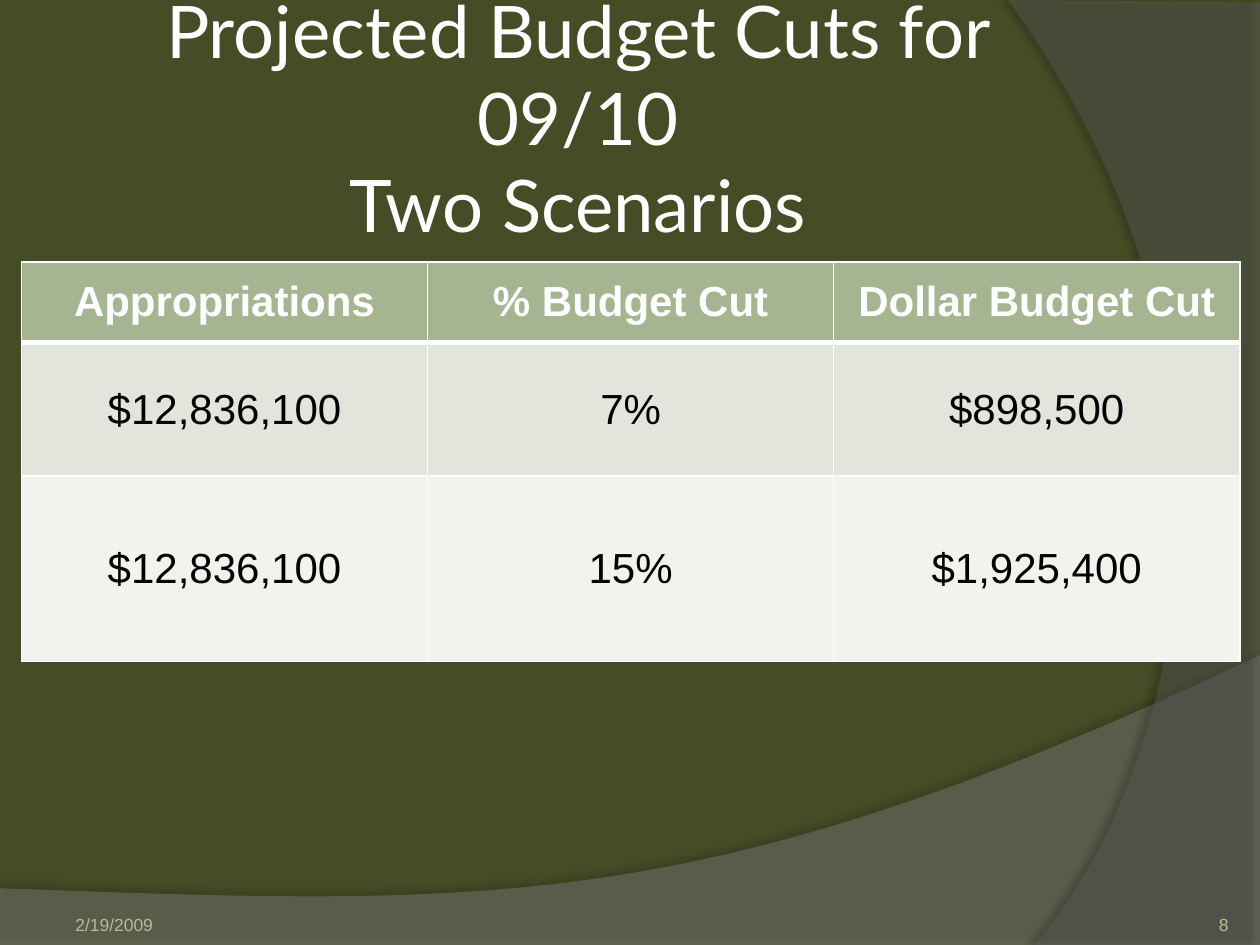
from dataclasses import dataclass

from lxml.etree import SubElement
from pptx import Presentation
from pptx.dml.color import RGBColor
from pptx.enum.text import MSO_ANCHOR, PP_ALIGN
from pptx.oxml.ns import qn
from pptx.util import Inches, Pt


@dataclass(frozen=True)
class Theme:
    back: str = "444D26"
    wave: str = "7F7F7F"
    arc: str = "5E5E5E"
    white: str = "FFFFFF"
    black: str = "000000"
    head: str = "A5B592"
    rows: tuple = ("E1E5DC", "F0F3EE")
    foot: str = "BCB995"
    title_font: str = "Lato"
    body_font: str = "Arial"
    title_size: float = 41.4
    cell_size: int = 24
    foot_size: int = 10


THEME = Theme()
ROWS = [
    ("Appropriations", "% Budget Cut", "Dollar Budget Cut"),
    ("$12,836,100", "7%", "$898,500"),
    ("$12,836,100", "15%", "$1,925,400"),
]
HEIGHTS = (0.64, 1.06, 1.47)


def paint(fill, color):
    fill.solid()
    fill.fore_color.rgb = RGBColor.from_string(color)


def style(para, font, size, color, align, bold=False):
    para.alignment = align
    for run in para.runs:
        run.font.name = font
        run.font.size = Pt(size)
        run.font.bold = bold
        run.font.color.rgb = RGBColor.from_string(color)


def add_alpha(color, percent):
    SubElement(color, qn("a:alpha"), val=str(percent * 1000))


def bezier(start, ctrl1, ctrl2, end, steps=60):
    points = []
    for i in range(1, steps + 1):
        t = i / steps
        u = 1 - t
        weights = (u**3, 3 * u * u * t, 3 * u * t * t, t**3)
        points.append(tuple(
            sum(w * p[axis] for w, p in zip(weights, (start, ctrl1, ctrl2, end)))
            for axis in (0, 1)
        ))
    return points


def add_band(slide, box, edge, curve, color, alpha, shade):
    """Draw straight edges, then a curve back to the start; points are relative to box."""
    left, top = box[:2]
    points = [
        (Inches(left + x), Inches(top + y))
        for x, y in edge + bezier(edge[-1], *curve)
    ]
    maker = slide.shapes.build_freeform(*points[0])
    maker.add_line_segments(points[1:], close=True)
    band = maker.convert_to_shape()
    paint(band.fill, color)
    add_alpha(band.fill._xPr.find(qn("a:solidFill"))[0], alpha)
    band.line.fill.background()

    # Soft shadow along the curve
    band.shadow.inherit = False
    effects = band._element.spPr.find(qn("a:effectLst"))
    dist, angle, dark = shade
    outer = SubElement(
        effects, qn("a:outerShdw"), blurRad=str(Pt(4)), dist=str(Pt(dist)),
        dir=str(angle * 60000), algn="ctr", rotWithShape="0",
    )
    add_alpha(SubElement(outer, qn("a:srgbClr"), val=THEME.black), dark)


def add_label(slide, box, text, font, size, color, align, anchor, insets):
    frame = slide.shapes.add_textbox(*map(Inches, box)).text_frame
    frame.word_wrap = True
    frame.vertical_anchor = anchor
    (frame.margin_left, frame.margin_top,
     frame.margin_right, frame.margin_bottom) = map(Inches, insets)
    para = frame.paragraphs[0]
    para.text = text
    style(para, font, size, color, align)


def add_border(cell, side, width):
    line = SubElement(cell._tc.get_or_add_tcPr(), qn(f"a:ln{side}"), w=str(Pt(width)))
    SubElement(SubElement(line, qn("a:solidFill")), qn("a:srgbClr"), val=THEME.white)


def add_budget(slide, box):
    table = slide.shapes.add_table(len(ROWS), len(ROWS[0]), *map(Inches, box)).table
    table.horz_banding = False
    for col in table.columns:
        col.width = Inches(box[2] / len(ROWS[0]))
    for r, (row, height) in enumerate(zip(ROWS, HEIGHTS)):
        table.rows[r].height = Inches(height)
        is_head = r == 0
        for c, text in enumerate(row):
            cell = table.cell(r, c)
            for side in "LRTB":
                thick = (side == "B" and is_head) or (side == "T" and r == 1)
                add_border(cell, side, 3 if thick else 1)
            paint(cell.fill, THEME.head if is_head else THEME.rows[r - 1])
            cell.vertical_anchor = MSO_ANCHOR.MIDDLE
            cell.text_frame.text = text
            style(
                cell.text_frame.paragraphs[0], THEME.body_font, THEME.cell_size,
                THEME.white if is_head else THEME.black, PP_ALIGN.CENTER, is_head,
            )


def add_scene(slide, box):
    left, top, width, height = box
    paint(slide.background.fill, THEME.back)
    # Wave along the bottom
    add_band(
        slide, (left, top + 5.2),
        [(0, 1.85), (0, height - 5.2), (width, height - 5.2), (width, 0)],
        [(5.59, 2.09), (3.91, 1.99), (0, 1.85)],
        THEME.wave, 45, (3.5, 270, 35),
    )
    # Arc down the right side
    add_band(
        slide, (left + width - 2, top),
        [(2, 0.02), (2, height), (0.21, height)],
        [(1.35, 6.19), (2.18, 3), (0, 0)],
        THEME.arc, 40, (4, 180, 45),
    )


def add_title(slide, box):
    add_label(
        slide, box, "Projected Budget Cuts for 09/10\vTwo Scenarios",
        THEME.title_font, THEME.title_size, THEME.white,
        PP_ALIGN.CENTER, MSO_ANCHOR.MIDDLE, (0.05,) * 4,
    )


def add_footer(slide, box):
    left, top, width, height = box
    look = (THEME.body_font, THEME.foot_size, THEME.foot)
    add_label(slide, (left, top, 2.33, height), "2/19/2009", *look,
              PP_ALIGN.LEFT, MSO_ANCHOR.BOTTOM, (0.1, 0.05, 0.1, 0))
    add_label(slide, (left + width - 0.83, top, 0.83, height), "8", *look,
              PP_ALIGN.RIGHT, MSO_ANCHOR.BOTTOM, (0,) * 4)


def main():
    deck = Presentation()
    deck.slide_width, deck.slide_height = Inches(10), Inches(7.5)
    slide = deck.slides.add_slide(deck.slide_layouts[6])
    add_scene(slide, (0, 0, 10, 7.5))
    add_title(slide, (0.5, 0.3, 8.17, 1.25))
    add_budget(slide, (0.17, 2.08, 9.67, sum(HEIGHTS)))
    add_footer(slide, (0.5, 7.02, 9.25, 0.4))
    deck.save("out.pptx")


if __name__ == "__main__":
    main()
